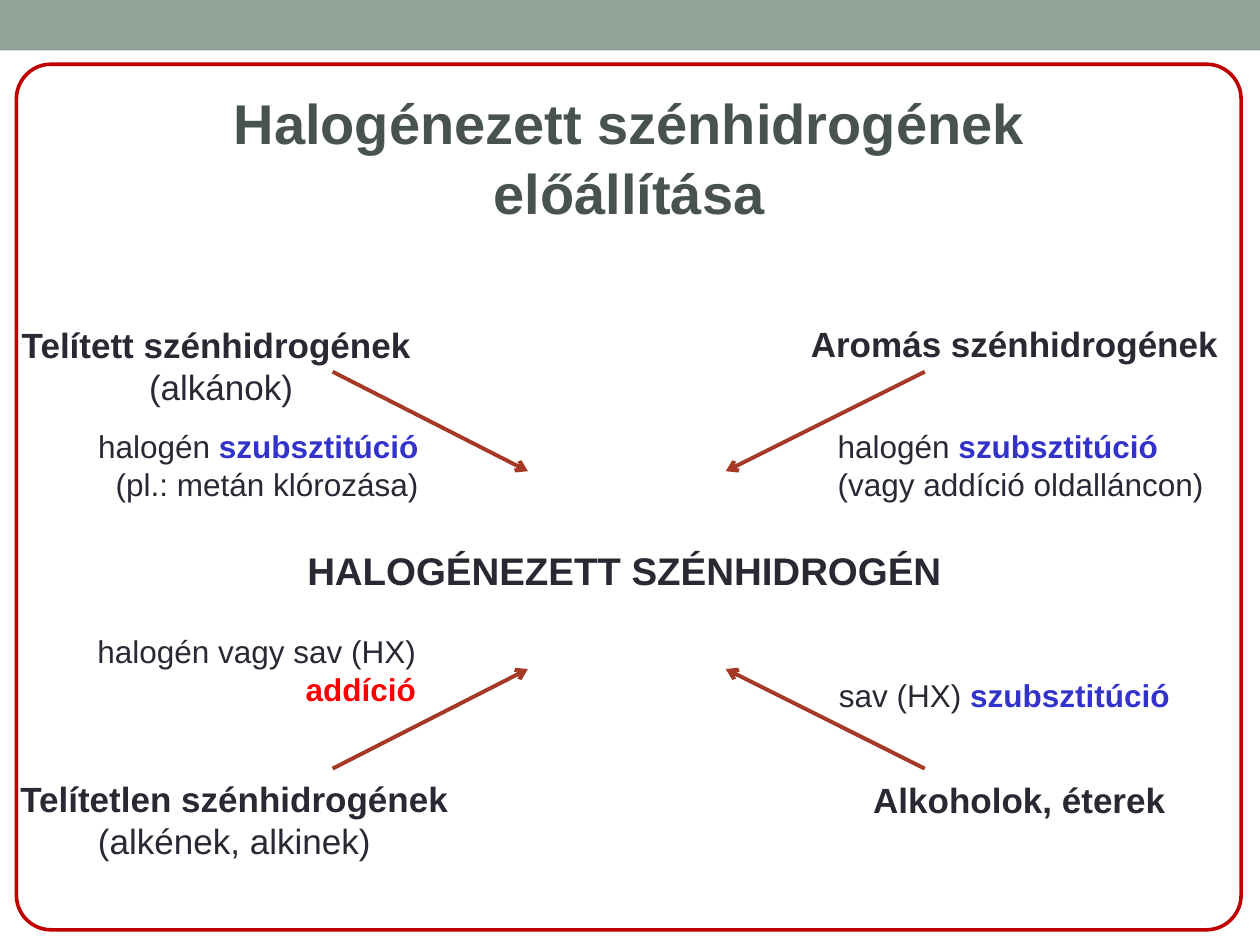
"""Builds a slide on how halogenated hydrocarbons are prepared."""
from dataclasses import dataclass
from typing import Any

from lxml import etree
from pptx import Presentation
from pptx.dml.color import RGBColor
from pptx.enum.shapes import MSO_CONNECTOR, MSO_SHAPE
from pptx.enum.text import MSO_ANCHOR, MSO_AUTO_SIZE, PP_ALIGN
from pptx.oxml.ns import qn
from pptx.util import Inches, Pt

LEFT, CENTER, RIGHT = PP_ALIGN.LEFT, PP_ALIGN.CENTER, PP_ALIGN.RIGHT
RECTANGLE, ROUNDED = MSO_SHAPE.RECTANGLE, MSO_SHAPE.ROUNDED_RECTANGLE
STRAIGHT = MSO_CONNECTOR.STRAIGHT
MIDDLE = MSO_ANCHOR.MIDDLE
NO_AUTOFIT, FIT_SHAPE = MSO_AUTO_SIZE.NONE, MSO_AUTO_SIZE.SHAPE_TO_FIT_TEXT

SAGE = RGBColor(0x93, 0xA2, 0x99)
TITLE_GREEN = RGBColor(0x47, 0x53, 0x4C)
INK = RGBColor(0x29, 0x29, 0x34)
BLUE = RGBColor(0x33, 0x33, 0xCC)
RED = RGBColor(0xFF, 0x00, 0x00)
FRAME_RED = RGBColor(0xC0, 0x00, 0x00)
RUST = RGBColor(0xA5, 0x39, 0x26)

COLUMNS, ROWS = 100, 75


@dataclass
class Diagram:
    """Holds the style and the current slide, placed on a 100 by 75 grid."""
    slide: Any
    width: int
    height: int
    font: str = "Arial"

    def place(self, column, row):
        return round(self.width * column / COLUMNS), round(self.height * row / ROWS)

    def style(self, font, size=None, color=None, bold=None):
        font.name = self.font
        if size:
            font.size = Pt(size)
        if color is not None:
            font.color.rgb = color
        font.bold = bold

    def title(self, box, lines):
        heading = self.slide.shapes.title
        heading.left, heading.top = self.place(*box[:2])
        heading.width, heading.height = self.place(*box[2:])
        frame = heading.text_frame
        frame.auto_size = NO_AUTOFIT
        frame.vertical_anchor = MIDDLE
        frame.text = "\n".join(lines)
        for paragraph in frame.paragraphs:
            paragraph.alignment = CENTER
            paragraph.line_spacing = 1.04
            self.style(paragraph.font, 32, TITLE_GREEN, True)

    def panel(self, kind, box, fill=None, line=None):
        panel = self.slide.shapes.add_shape(kind, *self.place(*box[:2]), *self.place(*box[2:]))
        panel.shadow.inherit = False
        if fill is None:
            panel.fill.background()
        else:
            panel.fill.solid()
            panel.fill.fore_color.rgb = fill
        if line is None:
            panel.line.fill.background()
        else:
            panel.line.color.rgb = line
            panel.line.width = Pt(2.08)
        return panel

    def label(self, box, size, align, lines):
        label = self.slide.shapes.add_textbox(*self.place(*box[:2]), *self.place(*box[2:]))
        frame = label.text_frame
        frame.word_wrap = False
        frame.auto_size = FIT_SHAPE
        for index, runs in enumerate(lines):
            paragraph = frame.add_paragraph() if index else frame.paragraphs[0]
            paragraph.alignment = align
            if len(runs) == 1:
                self.style(paragraph.font, size, *runs[0][1:])
            else:
                self.style(paragraph.font, size)
            for text, color, bold in runs:
                run = paragraph.add_run()
                run.text = text
                if len(runs) > 1:
                    run.font.color.rgb = color
                    run.font.bold = bold

    def arrow(self, start, end):
        arrow = self.slide.shapes.add_connector(STRAIGHT, *self.place(*start), *self.place(*end))
        arrow.line.color.rgb = RUST
        arrow.line.width = Pt(2.25)
        etree.SubElement(arrow.line._get_or_add_ln(), qn("a:tailEnd"), type="arrow")
        etree.SubElement(arrow._element.spPr, qn("a:effectLst"))


def plain(text):
    return text, INK, False


def strong(text, color=INK):
    return text, color, True


def main():
    presentation = Presentation()
    presentation.slide_width, presentation.slide_height = Inches(10), Inches(7.5)
    slide = presentation.slides.add_slide(presentation.slide_layouts[5])
    diagram = Diagram(slide, presentation.slide_width, presentation.slide_height)

    diagram.panel(RECTANGLE, (0, 0, COLUMNS, 4), fill=SAGE)
    diagram.title((7.1, 6.5, 85.7, 11.8), ["Halogénezett szénhidrogének", "előállítása"])
    border = diagram.panel(ROUNDED, (1.3, 5.1, 97.2, 68.7), line=FRAME_RED)
    border.adjustments[0] = 0.04

    starting_materials = [
        ((0.6, 25.2, 33.9, 7.7), [[strong("Telített szénhidrogének ")], [plain("(alkánok)")]]),
        ((0.5, 61.2, 36.2, 7.7), [[strong("Telítetlen szénhidrogének")], [plain("(alkének, alkinek)")]]),
        ((63.2, 25.1, 35.4, 4.4), [[strong("Aromás szénhidrogének ")]]),
        ((68.2, 61.3, 25.4, 4.4), [[strong("Alkoholok, éterek")]]),
    ]
    for box, lines in starting_materials:
        diagram.label(box, 20, CENTER, lines)

    diagram.label((23.4, 42.9, 52.9, 4.7), 22, LEFT, [[strong("HALOGÉNEZETT SZÉNHIDROGÉN")]])

    for outer, inner in ((26.4, 41.9), (73.4, 57.6)):
        for far, near in ((29.5, 37.4), (61, 53.1)):
            diagram.arrow((outer, far), (inner, near))

    substitution = strong("szubsztitúció", BLUE)
    reactions = [
        ((6.5, 33.4, 27.7, 7.1), RIGHT,
         [[plain("halogén "), substitution], [plain("(pl.: metán klórozása)")]]),
        ((65.5, 33.4, 31.3, 7.1), LEFT,
         [[plain("halogén "), substitution], [plain("(vagy addíció oldalláncon)")]]),
        ((6.5, 49.7, 27.5, 7.1), RIGHT,
         [[plain("halogén vagy sav (HX)")], [strong("addíció", RED)]]),
        ((65.6, 53.2, 28.5, 4), LEFT, [[plain("sav (HX) "), substitution]]),
    ]
    for box, align, lines in reactions:
        diagram.label(box, 18, align, lines)

    presentation.save("out.pptx")


if __name__ == "__main__":
    main()
